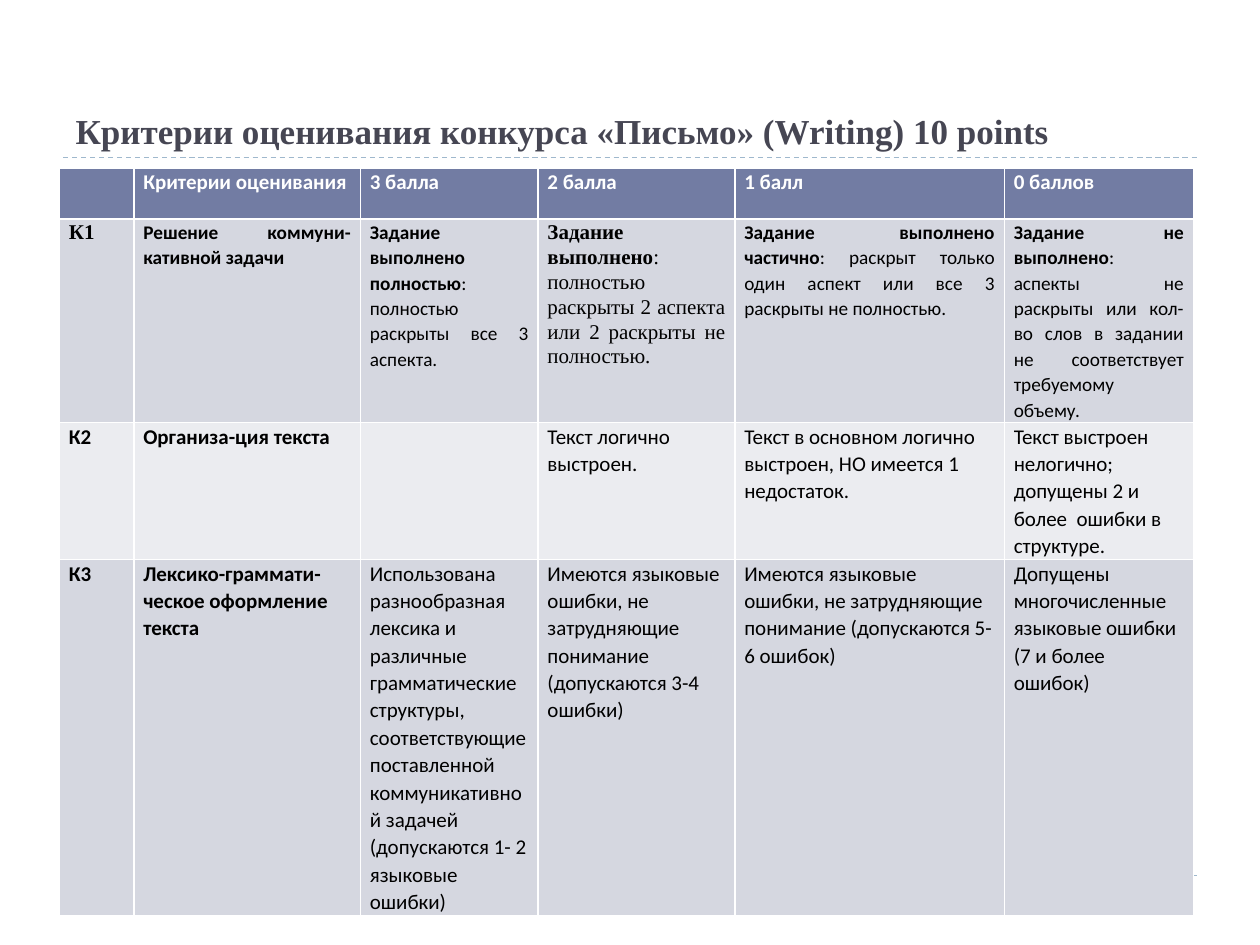
import pptx
import pptx.util
import pptx.dml.color
import pptx.enum.dml
import pptx.enum.shapes
import pptx.enum.text
import pptx.oxml.ns
import lxml.etree

Pt = pptx.util.Pt
RGBColor = pptx.dml.color.RGBColor
PP_ALIGN = pptx.enum.text.PP_ALIGN

WHITE = RGBColor(0xFF, 0xFF, 0xFF)
BLACK = RGBColor(0, 0, 0)
TITLE_GRAY = RGBColor(0x46, 0x46, 0x53)
RULE_BLUE = RGBColor(0x9F, 0xB8, 0xCD)
HEADER_FILL = RGBColor(0x72, 0x7C, 0xA3)
BAND_FILLS = [RGBColor(0xD5, 0xD7, 0xE0), RGBColor(0xEB, 0xEC, 0xF0)]

SANS, SERIF = "Calibri", "Times New Roman"
COL_WIDTHS = [42.5, 129.5, 101.5, 112.5, 154, 108]
ROW_HEIGHTS = [29, 115, 78, 203]

# Each cell is (bold text, plain text); a line break starts a new paragraph
HEADERS = [("", "")] + [(name, "") for name in (
    "Критерии оценивания", "3 балла", "2 балла", "1 балл", "0 баллов")]
CRITERIA = [
    [("К1", ""),
     ("Решение коммуни-кативной задачи", ""),
     ("Задание выполнено полностью", ": полностью раскрыты все 3 аспекта. "),
     ("Задание выполнено",
      ": полностью раскрыты 2 аспекта или 2 раскрыты не полностью."),
     ("Задание выполнено частично",
      ": раскрыт только один аспект или все 3 раскрыты не полностью. "),
     ("Задание не выполнено",
      ": аспекты не раскрыты или кол-во слов в задании не соответствует "
      "требуемому объему.")],
    [("К2", ""),
     ("Организа-ция текста", ""),
     ("", ""),
     ("", "Текст логично выстроен."),
     ("", "Текст в основном логично выстроен, НО имеется 1 недостаток."),
     ("", "Текст выстроен нелогично; допущены 2 и более  ошибки в структуре.")],
    [("К3", ""),
     ("Лексико-граммати-ческое оформление текста", ""),
     ("", "Использована разнообразная лексика и различные грамматические "
          "структуры, соответствующие\nпоставленной коммуникативной задачей "
          "(допускаются 1- 2 языковые ошибки)"),
     ("", "Имеются языковые ошибки, не затрудняющие понимание "
          "(допускаются 3-4 ошибки)"),
     ("", "Имеются языковые ошибки, не затрудняющие понимание "
          "(допускаются 5-6 ошибок)"),
     ("", "Допущены многочисленные языковые ошибки (7 и более ошибок)")],
]


def format_run(r, font, size, color, bold):
    r.font.name = font
    r.font.size = Pt(size)
    r.font.color.rgb = color
    r.font.bold = bold


def add_rule(s, left, top, width):
    line = s.shapes.add_connector(pptx.enum.shapes.MSO_CONNECTOR.STRAIGHT,
                                  Pt(left), Pt(top), Pt(left + width), Pt(top))
    line.line.color.rgb = RULE_BLUE
    line.line.width = Pt(0.75)
    line.line.dash_style = pptx.enum.dml.MSO_LINE.DASH
    lxml.etree.SubElement(line._element.spPr, pptx.oxml.ns.qn("a:effectLst"))


def add_title(s, left, top, width, height):
    sp = s.shapes.title
    sp.left, sp.top, sp.width, sp.height = Pt(left), Pt(top), Pt(width), Pt(height)
    tf = sp.text_frame
    tf.text = "Критерии оценивания конкурса «Письмо» (Writing) 10 points"
    tf.vertical_anchor = pptx.enum.text.MSO_ANCHOR.BOTTOM
    p = tf.paragraphs[0]
    p.alignment = PP_ALIGN.LEFT
    format_run(p.runs[0], SERIF, 20, TITLE_GRAY, True)


def fill_cell(cell, content, font, size, color, align):
    bold_text, plain_text = content
    if not bold_text and not plain_text:
        return
    cell.margin_left = cell.margin_right = Pt(5.4)
    cell.margin_top = cell.margin_bottom = 0
    tf = cell.text_frame
    for i, text in enumerate(plain_text.split("\n")):
        p = tf.add_paragraph() if i else tf.paragraphs[0]
        p.line_spacing = 1.07
        p.alignment = align
        parts = [(bold_text if i == 0 else "", True), (text, False)]
        for part, bold in parts:
            if part:
                r = p.add_run()
                r.text = part
                format_run(r, font, size, color, bold)


def add_criteria_table(s, left, top, width):
    rows = [HEADERS] + CRITERIA
    table = s.shapes.add_table(len(rows), len(COL_WIDTHS), Pt(left), Pt(top),
                               Pt(width), Pt(sum(ROW_HEIGHTS))).table
    for column, col_width in zip(table.columns, COL_WIDTHS):
        column.width = Pt(col_width)
    for i, row in enumerate(rows):
        table.rows[i].height = Pt(ROW_HEIGHTS[i])
        for j, content in enumerate(row):
            cell = table.cell(i, j)
            cell.fill.solid()
            cell.fill.fore_color.rgb = BAND_FILLS[(i - 1) % 2] if i else HEADER_FILL
            # The first criterion is justified and mixes two typefaces
            serif = i == 1 and j in (0, 3)
            fill_cell(cell, content,
                      font=SERIF if serif else SANS,
                      size=11 if i == 1 and not serif else 12,
                      color=BLACK if i else WHITE,
                      align=PP_ALIGN.JUSTIFY if i == 1 else PP_ALIGN.LEFT)


def main():
    prs = pptx.Presentation()
    prs.slide_width, prs.slide_height = Pt(720), Pt(540)
    s = prs.slides.add_slide(prs.slide_layouts[5])

    # Dashed rules under the title and at the foot
    for top in (90, 500.4):
        add_rule(s, 36, top, 648)

    add_title(s, 36, 12, 648, 78)
    add_criteria_table(s, 34, 96, sum(COL_WIDTHS))
    prs.save("out.pptx")


if __name__ == "__main__":
    main()
